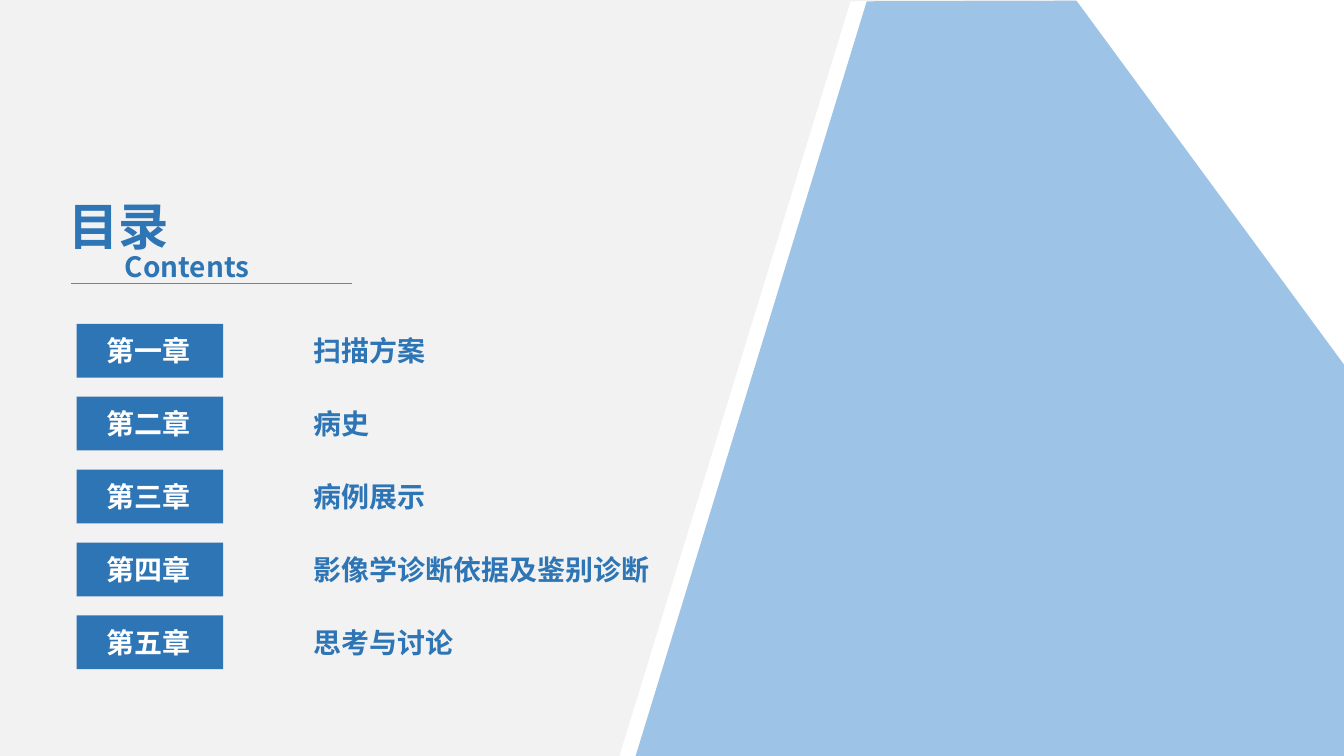
from dataclasses import dataclass

from lxml import etree
from pptx import Presentation
from pptx.dml.color import RGBColor
from pptx.enum.shapes import MSO_CONNECTOR, MSO_SHAPE
from pptx.enum.text import MSO_ANCHOR
from pptx.oxml.ns import qn
from pptx.util import Inches, Pt

RECT, STRAIGHT, MIDDLE = MSO_SHAPE.RECTANGLE, MSO_CONNECTOR.STRAIGHT, MSO_ANCHOR.MIDDLE
PAPER = RGBColor(0xF2, 0xF2, 0xF2)
WHITE = RGBColor(0xFF, 0xFF, 0xFF)
SKY = RGBColor(0x9D, 0xC3, 0xE6)
BLUE = RGBColor(0x2E, 0x75, 0xB6)
GRAY = RGBColor(0x7F, 0x7F, 0x7F)
FONT = "Noto Sans CJK SC"
WIDTH = 10
HEIGHT = WIDTH * 9 / 16

# Chapter list grid, in inches
BADGE_X, BADGE_W, BADGE_H = 0.57, 1.09, 0.4
LABEL_X, LABEL_W = 0.72, 0.79
TOPIC_X, TEXT_H = 2.26, 0.33
FIRST_Y, LAST_Y = 2.41, 4.58
LIST_INSETS = (0.07, 0.04)


@dataclass(frozen=True)
class Chapter:
    label: str
    topic: str
    width: float = 1.58


CHAPTERS = [
    Chapter("第一章", "扫描方案", 2.07),
    Chapter("第二章", "病史"),
    Chapter("第三章", "病例展示"),
    Chapter("第四章", "影像学诊断依据及鉴别诊断", 2.74),
    Chapter("第五章", "思考与讨论"),
]
PITCH = (LAST_Y - FIRST_Y) / (len(CHAPTERS) - 1)


def style(sp, color: RGBColor) -> None:
    """Give a shape a plain fill without outline or shadow."""
    sp.shadow.inherit = False
    sp.fill.solid()
    sp.fill.fore_color.rgb = color
    sp.line.fill.background()


def add_panel(shapes, points: list[tuple[float, float]], color: RGBColor) -> None:
    """Draw a closed, borderless polygon."""
    corners = [(Inches(x), Inches(y)) for x, y in points]
    builder = shapes.build_freeform(*corners[0])
    builder.add_line_segments(corners[1:], close=True)
    style(builder.convert_to_shape(), color)


def add_rect(shapes, *box: float):
    sp = shapes.add_shape(RECT, *map(Inches, box))
    style(sp, BLUE)
    return sp


def write(sp, text: str, size: float = 15, color: RGBColor = BLUE,
          insets: tuple[float, float] = LIST_INSETS) -> None:
    """Write one bold line, centred vertically in its shape."""
    tf = sp.text_frame
    side, edge = map(Inches, insets)
    frame = dict(word_wrap=True, vertical_anchor=MIDDLE, margin_left=side,
                 margin_right=side, margin_top=edge, margin_bottom=edge)
    for name, value in frame.items():
        setattr(tf, name, value)
    p = tf.paragraphs[0]
    p.alignment = 1
    r = p.add_run()
    r.text = text
    for name, value in dict(size=Pt(size), bold=True, name=FONT).items():
        setattr(r.font, name, value)
    r.font.color.rgb = color
    etree.SubElement(r.font._element, qn("a:ea")).set("typeface", FONT)


def add_text(shapes, text: str, box: tuple[float, ...], **options) -> None:
    write(shapes.add_textbox(*map(Inches, box)), text, **options)


def add_heading(shapes) -> None:
    insets = (0.1, 0.05)
    group = shapes.add_group_shape().shapes
    add_text(group, "目录", (0.41, 1.4, 1.17, 0.56), size=27, insets=insets)
    rule = group.add_connector(STRAIGHT, *map(Inches, (0.53, 2.11, 2.62, 2.11)))
    rule.line.color.rgb = GRAY
    rule.line.width = Pt(0.5)
    etree.SubElement(rule._element.spPr, qn("a:effectLst"))
    add_text(group, "Contents", (0.83, 1.81, 1.17, 0.35), insets=insets)


def add_chapter(shapes, row: int, chapter: Chapter) -> None:
    y = FIRST_Y + row * PITCH
    text_y = y + (BADGE_H - TEXT_H) / 2
    add_text(shapes, chapter.topic, (TOPIC_X, text_y, chapter.width, TEXT_H))
    badge = shapes.add_group_shape().shapes
    add_rect(badge, BADGE_X, y, BADGE_W, BADGE_H)
    label = add_rect(badge, LABEL_X, text_y, LABEL_W, TEXT_H)
    write(label, chapter.label, color=WHITE)


def main() -> None:
    prs = Presentation()
    prs.slide_width, prs.slide_height = Inches(WIDTH), Inches(HEIGHT)
    s = prs.slides.add_slide(prs.slide_layouts[6])
    s.background.fill.solid()
    s.background.fill.fore_color.rgb = PAPER

    # Slanted panels and the cut corner
    for top, bottom, right, color in [(6.33, 4.61, 9.87, WHITE),
                                      (6.45, 4.73, WIDTH, SKY)]:
        add_panel(s.shapes, [(top, 0.01), (right, 0), (right, HEIGHT),
                             (bottom, HEIGHT)], color)
    add_panel(s.shapes, [(8, -0.01), (10.01, -0.01), (WIDTH, 2.71)], WHITE)

    # Heading and chapter list
    add_heading(s.shapes)
    for row, chapter in enumerate(CHAPTERS):
        add_chapter(s.shapes, row, chapter)
    prs.save("out.pptx")


if __name__ == "__main__":
    main()
